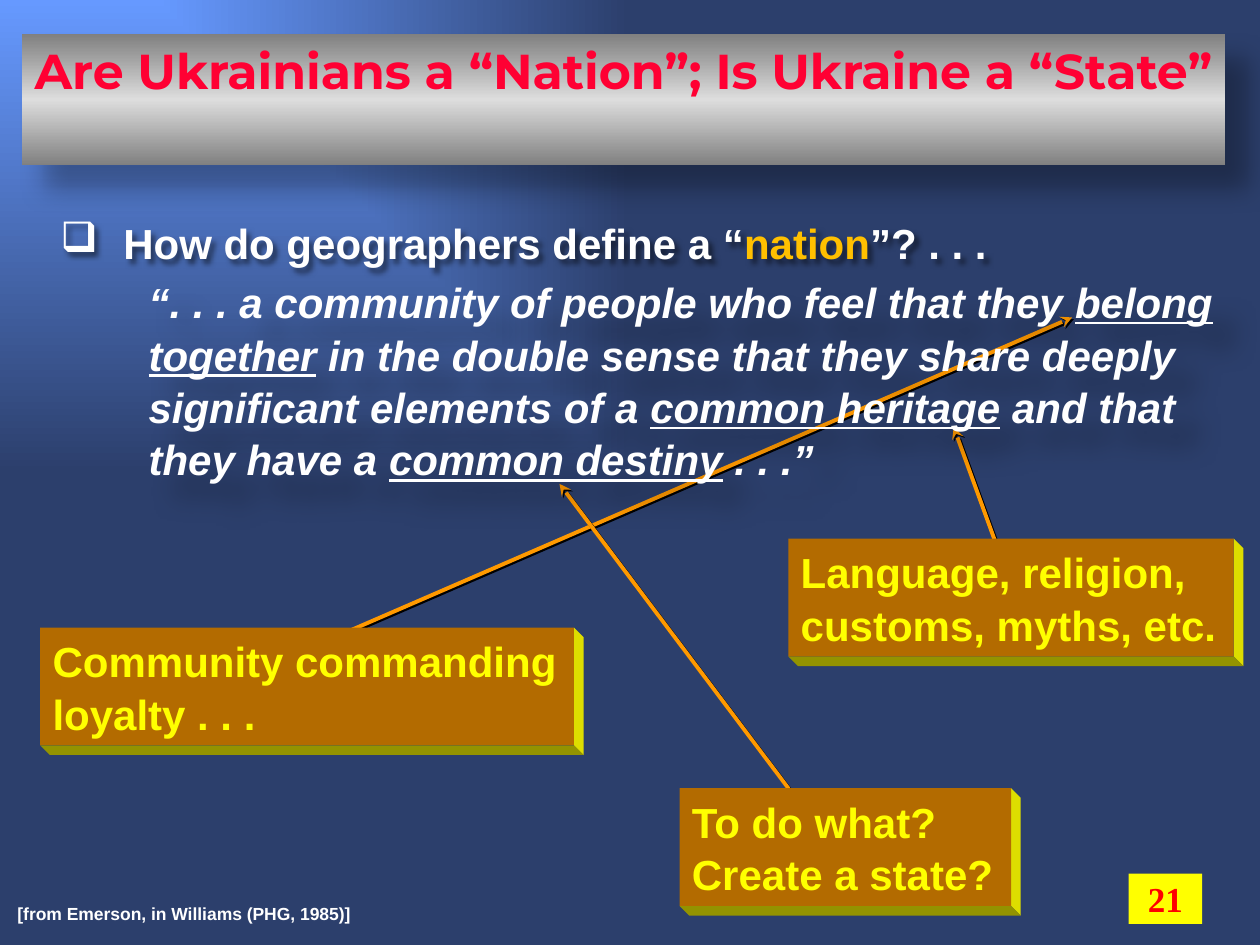
from lxml import etree
from pptx import Presentation
from pptx.dml.color import RGBColor
from pptx.enum.shapes import MSO_CONNECTOR, MSO_SHAPE
from pptx.enum.text import MSO_ANCHOR, PP_ALIGN
from pptx.oxml import parse_xml
from pptx.oxml.ns import qn
from pptx.util import Pt

RECT, STRAIGHT = MSO_SHAPE.RECTANGLE, MSO_CONNECTOR.STRAIGHT
LEFT, CENTER = PP_ALIGN.LEFT, PP_ALIGN.CENTER
TOP, MIDDLE = MSO_ANCHOR.TOP, MSO_ANCHOR.MIDDLE
WHITE = RGBColor(0xFF, 0xFF, 0xFF)
RED = RGBColor(0xFF, 0x00, 0x00)
CRIMSON = RGBColor(0xFF, 0x00, 0x33)
YELLOW = RGBColor(0xFF, 0xFF, 0x00)
GOLD = RGBColor(0xFF, 0xC0, 0x00)
ORANGE = RGBColor(0xFF, 0x99, 0x00)
BROWN = RGBColor(0xB3, 0x6B, 0x00)
SIDE = RGBColor(0xDD, 0xDD, 0x00)
UNDERSIDE = RGBColor(0x93, 0x93, 0x00)
GREY = RGBColor(0x80, 0x80, 0x80)
SILVER = RGBColor(0xDD, 0xDD, 0xDD)
SKY = RGBColor(0x66, 0x99, 0xFF)
NAVY = RGBColor(0x2C, 0x3F, 0x6C)
A = 'xmlns:a="http://schemas.openxmlformats.org/drawingml/2006/main"'


def add_shadow(shape, alpha, blur, dist):
    """Cast a black shadow down and to the right."""
    shape._element.spPr.append(parse_xml(
        f'<a:effectLst {A}><a:outerShdw blurRad="{Pt(blur)}" dist="{Pt(dist)}" '
        f'dir="2700000" algn="tl" rotWithShape="0"><a:srgbClr val="000000">'
        f'<a:alpha val="{alpha * 1000}"/></a:srgbClr></a:outerShdw></a:effectLst>'))


def write(shape, paragraphs, font, align=LEFT, anchor=TOP, wrap=True, spacing=1.0):
    """Fill a shape with paragraphs, each a list of (text, font changes)."""
    tf = shape.text_frame
    tf.word_wrap, tf.vertical_anchor = wrap, anchor
    for i, runs in enumerate(paragraphs):
        p = tf.paragraphs[0] if i == 0 else tf.add_paragraph()
        p.alignment, p.line_spacing = align, spacing
        for text, changes in runs:
            r = p.add_run()
            r.text = text
            for key, value in {"bold": True, **font, **changes}.items():
                if key == "color":
                    r.font.color.rgb = value
                else:
                    setattr(r.font, key, value)
    return tf


prs = Presentation()
prs.slide_width, prs.slide_height = Pt(720), Pt(540)
s = prs.slides.add_slide(prs.slide_layouts[6])

# Background: light spreading from the top left corner
fill = s.background.fill
fill.gradient()
for stop, color in zip(fill.gradient_stops, (SKY, NAVY)):
    stop.color.rgb = color
grad = s.background._cSld.find(".//" + qn("a:gradFill"))
grad.replace(grad.find(qn("a:lin")), parse_xml(
    f'<a:path {A} path="rect"><a:fillToRect r="100000" b="100000"/></a:path>'))

# Title bar
sp = s.shapes.add_shape(RECT, Pt(12.5), Pt(19.5), Pt(687.5), Pt(75))
sp.line.fill.background()
sp.fill.gradient()
sp.fill.gradient_angle = 270
stops = sp.fill._fill._gradFill.find(qn("a:gsLst"))
for old in list(stops):
    stops.remove(old)
for pos, color in ((0, GREY), (50, SILVER), (100, GREY)):
    gs = etree.SubElement(stops, qn("a:gs"), pos=str(pos * 1000))
    etree.SubElement(gs, qn("a:srgbClr"), val=str(color))
add_shadow(sp, 30, 15, 18)
write(sp, [[("Are Ukrainians a “Nation”; Is Ukraine a “State”", {})]],
      {"name": "Montserrat", "size": Pt(28), "color": CRIMSON}, CENTER)

# Question with a box bullet
body = {"name": "Arial", "size": Pt(24), "color": WHITE}
sp = s.shapes.add_textbox(Pt(27.4), Pt(119.5), Pt(665), Pt(36.7))
add_shadow(sp, 50, 3, 3)
tf = write(sp, [[("How do geographers define a “", {}), ("nation", {"color": GOLD}),
                 ("”? . . .", {})]], body, spacing=1.04)
pPr = tf.paragraphs[0]._p.get_or_add_pPr()
pPr.set("marL", str(Pt(36)))
pPr.set("indent", str(Pt(-36)))
etree.SubElement(pPr, qn("a:buChar"), char="❑")

# Arrows from the comments to the quotation
for x1, y1, x2, y2 in ((185.8, 366.5, 612.7, 181.4), (450.7, 450.7, 319.7, 276.5),
                       (577.4, 333.4, 545, 244.1)):
    line = s.shapes.add_connector(STRAIGHT, Pt(x1), Pt(y1), Pt(x2), Pt(y2))
    line.line.color.rgb, line.line.width = ORANGE, Pt(2.25)
    etree.SubElement(line.line._get_or_add_ln(), qn("a:tailEnd"), type="stealth")
    add_shadow(line, 100, 0, 1.4)

# Comment boxes with a raised edge
DEPTH = 5.5
for x, y, w, lines in (
        (23, 358.6, 305, ("Community commanding", "loyalty . . .")),
        (450.5, 307.8, 254.5, ("Language, religion,", "customs, myths, etc.")),
        (388.3, 450.4, 189.5, ("To do what?", "Create a state?"))):
    h = 67.3
    right, bottom = x + w, y + h
    corner = (right + DEPTH, bottom + DEPTH)
    faces = ((SIDE, [(right, y), (right + DEPTH, y + DEPTH), corner, (right, bottom)]),
             (UNDERSIDE, [(x, bottom), (right, bottom), corner, (x + DEPTH, bottom + DEPTH)]))
    for color, points in faces:
        points = [(Pt(px), Pt(py)) for px, py in points]
        fb = s.shapes.build_freeform(*points[0])
        fb.add_line_segments(points[1:])
        face = fb.convert_to_shape()
        face.shadow.inherit = False
        face.fill.solid()
        face.fill.fore_color.rgb = color
        face.line.fill.background()
    sp = s.shapes.add_shape(RECT, Pt(x), Pt(y), Pt(w), Pt(h))
    sp.shadow.inherit = False
    sp.fill.solid()
    sp.fill.fore_color.rgb = BROWN
    sp.line.fill.background()
    write(sp, [[(text, {})] for text in lines], {**body, "color": YELLOW},
          wrap=False, spacing=1.04)

# Source note
sp = s.shapes.add_textbox(Pt(2.9), Pt(512.6), Pt(376.5), Pt(19.4))
write(sp, [[("[from Emerson, in Williams (PHG, 1985)]", {})]], {**body, "size": Pt(10)})

# Quotation
under = {"underline": True}
sp = s.shapes.add_textbox(Pt(77.8), Pt(153.4), Pt(639.4), Pt(123.8))
add_shadow(sp, 30, 15, 18)
write(sp, [[("“. . . a community of people who feel that they ", {}),
            ("belong together", under),
            (" in the double sense that they share deeply significant elements of a ", {}),
            ("common heritage", under), (" and that they have a ", {}),
            ("common destiny", under), (" . . .”", {})]],
      {**body, "italic": True}, spacing=1.04)

# Slide number
sp = s.shapes.add_shape(RECT, Pt(645), Pt(499.2), Pt(42), Pt(28.8))
sp.shadow.inherit = False
sp.fill.solid()
sp.fill.fore_color.rgb = YELLOW
sp.line.fill.background()
write(sp, [[("21", {})]], {"name": "Times New Roman", "size": Pt(20), "color": RED},
      CENTER, MIDDLE, wrap=False)

prs.save("out.pptx")
